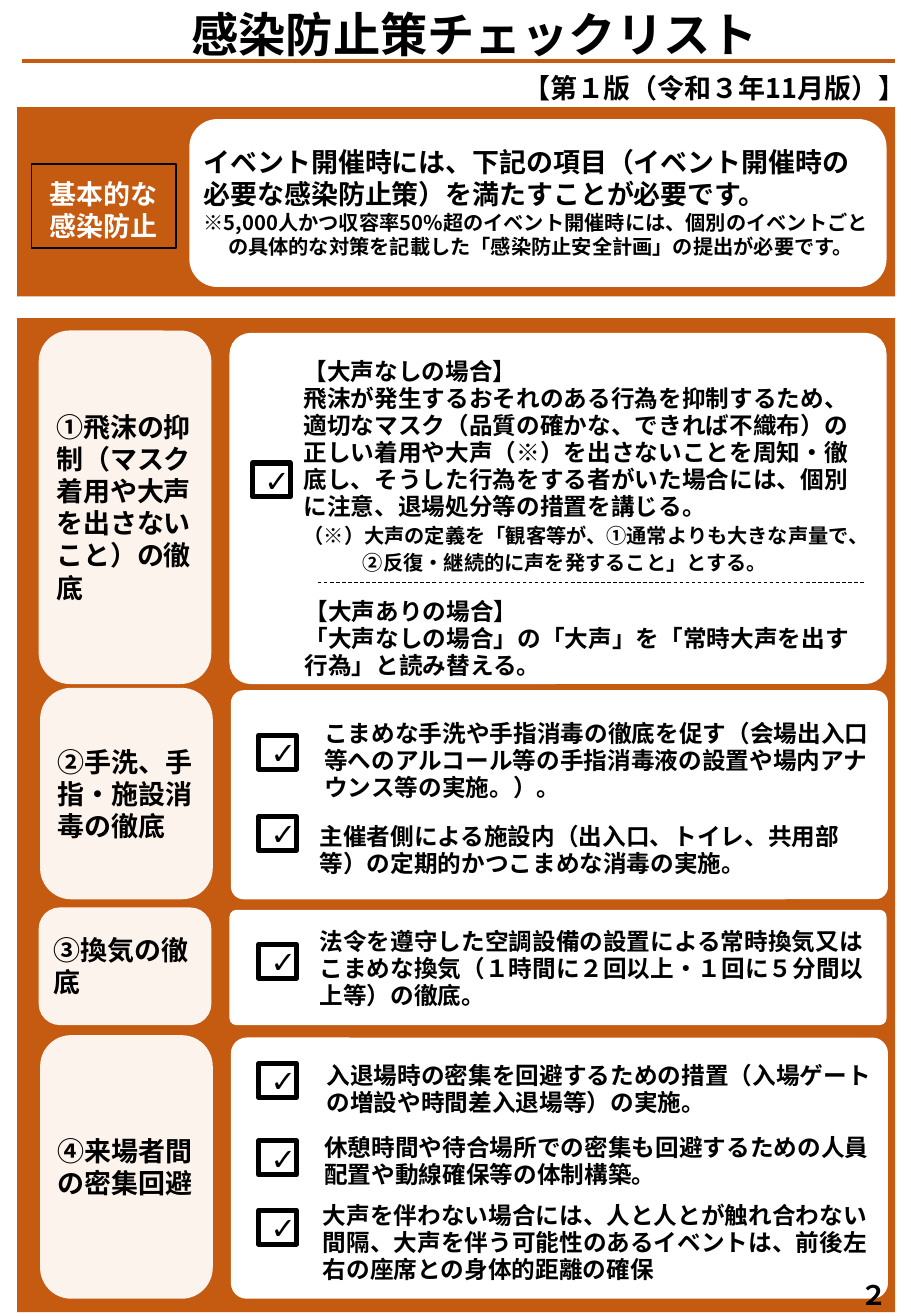
from lxml import etree
from pptx import Presentation
from pptx import util as u
from pptx.dml.color import RGBColor
from pptx.enum import dml, shapes, text
from pptx.oxml import ns
from pptx.util import Cm

ORANGE = RGBColor(0xC5, 0x5A, 0x11)
CREAM = RGBColor(0xFD, 0xF3, 0xED)
WHITE = RGBColor(0xFF, 0xFF, 0xFF)
BLACK = RGBColor(0, 0, 0)
FONT = "Noto Sans CJK JP"
RECT = shapes.MSO_SHAPE.RECTANGLE
ROUND = shapes.MSO_SHAPE.ROUNDED_RECTANGLE
TOP, MIDDLE, BOTTOM = (text.MSO_ANCHOR.TOP, text.MSO_ANCHOR.MIDDLE,
                       text.MSO_ANCHOR.BOTTOM)
CENTER = text.PP_ALIGN.CENTER
MEASURE_WIDTH = 12.04

# Section heading, label left, label top, label height
SECTIONS = [
    ("①飛沫の抑制（マスク着用や大声を出さないこと）の徹底", 0.81, 6.91, 7.39),
    ("②手洗、手指・施設消毒の徹底", 0.84, 14.38, 4.42),
    ("③換気の徹底", 0.81, 18.97, 2.46),
    ("④来場者間の密集回避", 0.84, 21.64, 5.51),
]
# Measure, left, top, height, top of its check box
MEASURES = [
    ("こまめな手洗や手指消毒の徹底を促す（会場出入口等へのアルコール等の手指消毒液の設置や"
     "場内アナウンス等の実施。）。", 6.53, 14.91, 1.96, 15.37),
    ("主催者側による施設内（出入口、トイレ、共用部等）の定期的かつこまめな消毒の実施。",
     6.43, 17.04, 1.42, 17.07),
    ("法令を遵守した空調設備の設置による常時換気又はこまめな換気"
     "（１時間に２回以上・１回に５分間以上等）の徹底。", 6.43, 19.25, 1.98, 19.74),
    ("入退場時の密集を回避するための措置（入場ゲートの増設や時間差入退場等）の実施。",
     6.58, 22.05, 1.42, 22.23),
    ("休憩時間や待合場所での密集も回避するための人員配置や動線確保等の体制構築。",
     6.53, 23.55, 1.42, 23.85),
    ("大声を伴わない場合には、人と人とが触れ合わない間隔、大声を伴う可能性のあるイベントは、"
     "前後左右の座席との身体的距離の確保", 6.5, 24.94, 2.01, 25.3),
]
QUIET_CASE = [
    "【大声なしの場合】",
    "飛沫が発生するおそれのある行為を抑制するため、適切なマスク（品質の確かな、できれば不織布）の"
    "正しい着用や大声（※）を出さないことを周知・徹底し、そうした行為をする者がいた場合には、"
    "個別に注意、退場処分等の措置を講じる。",
]
QUIET_NOTE = ("（※）大声の定義を「観客等が、①通常よりも大きな声量で、"
              "②反復・継続的に声を発すること」とする。")
LOUD_CASE = [
    "【大声ありの場合】",
    "「大声なしの場合」の「大声」を「常時大声を出す行為」と読み替える。",
]
LEAD = ("イベント開催時には、下記の項目（イベント開催時の必要な感染防止策）を"
        "満たすことが必要です。")
LEAD_NOTE = ("※5,000人かつ収容率50%超のイベント開催時には、個別のイベントごとの"
             "具体的な対策を記載した「感染防止安全計画」の提出が必要です。")


def set_all(target, values):
    for name, value in values.items():
        setattr(target, name, value)


def write(shape, lines, size, spacing=None, anchor=TOP, color=BLACK,
          align=text.PP_ALIGN.LEFT, font=FONT, bold=True, **margins):
    frame = shape.text_frame
    set_all(frame, {"word_wrap": True, "vertical_anchor": anchor,
                    "auto_size": text.MSO_AUTO_SIZE.NONE})
    set_all(frame, {f"margin_{side}": Cm(value)
                    for side, value in margins.items()})
    for index, line in enumerate(lines):
        paragraph = frame.paragraphs[0] if index == 0 else frame.add_paragraph()
        add_line(paragraph, line, size, spacing, color, align, font, bold)


def add_line(paragraph, line, size, spacing, color=BLACK,
             align=text.PP_ALIGN.LEFT, font=FONT, bold=True):
    set_all(paragraph, {"alignment": align, "space_before": u.Pt(0),
                        "line_spacing": u.Pt(spacing) if spacing else None})
    run = paragraph.add_run()
    run.text = line
    set_all(run.font, {"size": u.Pt(size), "bold": bold, "name": font})
    run.font.color.rgb = color
    east_asian = etree.SubElement(run.font._element, ns.qn("a:ea"))
    east_asian.set("typeface", font)


def add_note(shape, line, spacing, indent):
    paragraph = shape.text_frame.add_paragraph()
    add_line(paragraph, line, 12, spacing)
    properties = paragraph._p.get_or_add_pPr()
    properties.set("marL", str(Cm(indent)))
    properties.set("indent", str(-Cm(indent)))


def add_box(slide, kind, box, fill=None, line=None, width=1, corner=None):
    shape = slide.shapes.add_shape(kind, *map(Cm, box))
    shape.shadow.inherit = False
    if fill is None:
        shape.fill.background()
    else:
        shape.fill.solid()
        shape.fill.fore_color.rgb = fill
    if line is None:
        shape.line.fill.background()
    else:
        shape.line.color.rgb = line
        shape.line.width = u.Pt(width)
    if corner is not None:
        shape.adjustments[0] = corner
    return shape


def add_text(slide, box, lines, size, spacing, **style):
    shape = slide.shapes.add_textbox(*map(Cm, box))
    write(shape, lines, size, spacing, **style)
    return shape


def add_rule(slide, left, right, top, color, width, dash=None):
    rule = slide.shapes.add_connector(shapes.MSO_CONNECTOR.STRAIGHT, Cm(left),
                                      Cm(top), Cm(right), Cm(top))
    rule.line.color.rgb = color
    set_all(rule.line, {"width": u.Pt(width), "dash_style": dash})
    etree.SubElement(rule._element.spPr, ns.qn("a:effectLst"))


def add_check(slide, left, top):
    check = add_box(slide, RECT, (left, top, 0.79, 0.71), line=BLACK, width=3)
    write(check, ["✓"], 18, anchor=MIDDLE, align=CENTER, font="Calibri", bold=False)


def add_section(slide, heading, left, top, height):
    add_box(slide, ROUND, (left + 3.99, top + 0.05, 13.74, height - 0.05),
            WHITE, corner=0.06)
    label = add_box(slide, ROUND, (left, top, 3.61, height), CREAM, corner=0.18)
    write(label, [heading], 16, 19, anchor=MIDDLE,
          left=0.18, right=0.18, top=0.1, bottom=0.1)


def add_heading(slide):
    # The title sits wholly above its rule
    title = slide.shapes.title
    set_all(title, {"left": Cm(-0.58), "top": Cm(0.02),
                    "width": Cm(21.01), "height": Cm(1.2)})
    write(title, ["感染防止策チェックリスト"], 28, 36, align=CENTER,
          top=0, bottom=0)
    add_rule(slide, 0.46, 18.72, 1.27, ORANGE, 2.25)
    add_text(slide, (10.49, 1.33, 8.89, 0.94), ["【第１版（令和３年11月版）】"],
             16, 20.5, align=CENTER)


def add_basics(slide):
    add_box(slide, RECT, (0.36, 2.24, 18.36, 3.96), ORANGE)
    add_box(slide, ROUND, (3.96, 2.49, 14.58, 3.51), WHITE)
    label = add_box(slide, RECT, (0.66, 3.43, 3.02, 1.75), line=BLACK)
    write(label, ["基本的な", "感染防止"], 16, 19, anchor=MIDDLE, color=WHITE,
          left=0.38, right=0.1, top=0.28)
    lead = add_text(slide, (4.01, 2.93, 14.5, 2.72), [LEAD], 16, 19)
    add_note(lead, LEAD_NOTE, 14.25, 0.51)


def add_measures(slide):
    add_box(slide, RECT, (0.36, 6.65, 18.36, 20.78), ORANGE)
    for section in SECTIONS:
        add_section(slide, *section)

    # Quiet and loud cases of the first section
    quiet = add_text(slide, (6.1, 7.3, MEASURE_WIDTH, 4.83), QUIET_CASE, 14, 16,
                     anchor=BOTTOM)
    add_note(quiet, QUIET_NOTE, 16, 1.24)
    add_rule(slide, 6.65, 18.06, 12.17, BLACK, 0.5, dml.MSO_LINE.DASH)
    add_text(slide, (6.12, 12.37, MEASURE_WIDTH, 1.96), LOUD_CASE, 14, 16,
             anchor=BOTTOM)
    add_check(slide, 5.28, 9.68)

    # Measures of the other sections
    for measure, left, top, height, check_top in MEASURES:
        add_text(slide, (left, top, MEASURE_WIDTH, height), [measure], 14, 16,
                 anchor=BOTTOM)
        add_check(slide, 5.41, check_top)


def main():
    presentation = Presentation()
    set_all(presentation, {"slide_width": Cm(19.05), "slide_height": Cm(27.51)})
    slide = presentation.slides.add_slide(presentation.slide_layouts[5])
    add_heading(slide)
    add_basics(slide)
    add_measures(slide)
    # Page number
    add_text(slide, (17.53, 26.6, 1.5, 0.9), ["２"], 16, 20.5,
             anchor=MIDDLE, align=CENTER)
    presentation.save("out.pptx")


if __name__ == "__main__":
    main()
